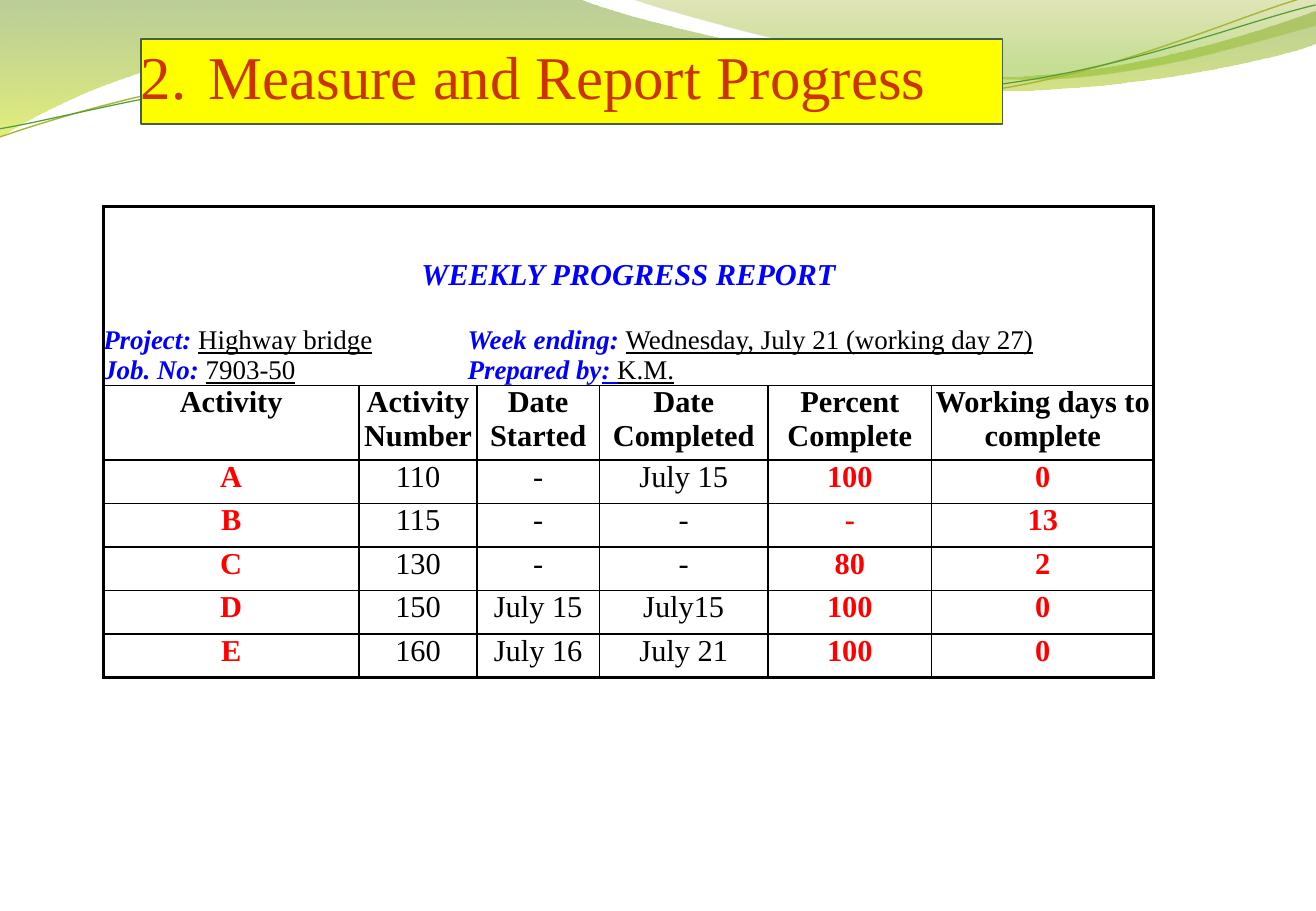
"""Build the weekly progress report slide with its wave header, title and table."""
from dataclasses import dataclass
from typing import Optional

from lxml.etree import SubElement
from pptx import Presentation
from pptx.dml.color import RGBColor
from pptx.enum.text import MSO_ANCHOR as ANCHOR, MSO_AUTO_SIZE as AUTO, PP_ALIGN as ALIGN
from pptx.oxml.ns import qn
from pptx.util import Pt

FONT = "Times New Roman"
BLACK, WHITE, RED, BLUE = "000000", "FFFFFF", "FF0000", "0000FF"
COLS = (151.7, 69.8, 72.6, 100, 97, 131.7)
ROWS = (106.2, 44.1) + (25.8,) * 5
RED_COLS = (0, 4, 5)
DATA = (
    ("Activity", "Activity Number", "Date Started", "Date Completed",
     "Percent Complete", "Working days to complete"),
    ("A", "110", "-", "July 15", "100", "0"),
    ("B", "115", "-", "-", "-", "13"),
    ("C", "130", "-", "-", "80", "2"),
    ("D", "150", "July 15", "July15", "100", "0"),
    ("E", "160", "July 16", "July 21", "100", "0"),
)


@dataclass
class Stop:
    position: float
    color: str
    alpha: int


@dataclass
class Wave:
    start: tuple
    segments: tuple
    stops: tuple = ()
    line: Optional[str] = None
    width: float = 0


WAVES = (
    Wave((0, 0), (
        (343.4, -0.7),
        (370.8, 12.2, 517.7, 45.4, 591.1, 45.4),
        (665.3, 45.4, 747.4, 18.7, 779.8, 6.5),
        (780.5, 25.9),
        (766.8, 31.7, 678.2, 54.7, 581.8, 54),
        (484.6, 54, 297.4, 20.2, 200.2, 24.5),
        (100.8, 25.9, 35.3, 59.8, -0.7, 81.4),
    ), stops=(Stop(0, "69921C", 45), Stop(1, "CCE10F", 55))),
    Wave((373.7, -0.7), (
        (396.7, 7.9, 531.4, 44.6, 599, 46.8),
        (667.4, 49.7, 749.5, 23, 779.8, 15.1),
        (779.8, 0),
    ), stops=(Stop(0, "9BAA1A", 30), Stop(0.8, "81BA16", 45))),
    Wave((-0.7, 81.4), (
        (37.4, 68.4, 123.1, 41.8, 215.3, 38.2),
        (308.2, 33.8, 461.5, 63.4, 555.8, 56.9),
        (649.4, 50.4, 731.5, 9.4, 778.3, -2.9),
    ), line="A9B733", width=0.85),
    Wave((0, 76.3), (
        (36.7, 70.6, 127.4, 44.6, 220.3, 41),
        (313.9, 37.4, 465.8, 59.8, 558.7, 53.3),
        (652.3, 47.5, 733.7, 13.7, 779.8, 2.9),
    ), line="549E39", width=0.75),
)


def rgb(color: str) -> RGBColor:
    return RGBColor.from_string(color)


def add_run(p, text: str, *, size: float = 18, color: str = BLACK, bold: bool = False,
            italic: bool = False, underline: bool = False) -> None:
    r = p.add_run()
    r.text = text
    f = r.font
    f.name, f.size, f.color.rgb = FONT, Pt(size), rgb(color)
    f.bold, f.italic, f.underline = bold, italic, underline


def bend(sp, segments: tuple) -> None:
    lines = list(sp._element.spPr.iter(qn("a:lnTo")))
    for line, segment in zip(lines, segments):
        if len(segment) == 2:
            continue
        line.clear()
        curve = line.makeelement(qn("a:cubicBezTo"))
        line.getparent().replace(line, curve)
        for x, y in zip(segment[::2], segment[1::2]):
            SubElement(curve, qn("a:pt"), x=str(Pt(x) - sp.left), y=str(Pt(y) - sp.top))


def add_wave(s, wave: Wave) -> None:
    builder = s.shapes.build_freeform(*map(Pt, wave.start))
    ends = [(Pt(segment[-2]), Pt(segment[-1])) for segment in wave.segments]
    builder.add_line_segments(ends, close=bool(wave.stops))
    sp = builder.convert_to_shape()
    bend(sp, wave.segments)
    sp.shadow.inherit = False
    if wave.line:
        sp.fill.background()
        sp.line.color.rgb = rgb(wave.line)
        sp.line.width = Pt(wave.width)
        return
    sp.line.fill.background()
    sp.fill.gradient()
    sp.fill.gradient_angle = 270
    for stop, spec in zip(sp.fill.gradient_stops, wave.stops):
        stop.position = spec.position
        stop.color.rgb = rgb(spec.color)
    for clr, spec in zip(sp._element.spPr.iter(qn("a:srgbClr")), wave.stops):
        SubElement(clr, qn("a:alpha"), val=str(spec.alpha * 1000))


def format_cell(cell, row: int, col: int) -> None:
    tcPr = cell._tc.get_or_add_tcPr()
    outer = {"L": col == 0, "R": col + cell.span_width == len(COLS),
             "T": row == 0, "B": row == len(ROWS) - 1}
    for side, is_outer in outer.items():
        ln = SubElement(tcPr, qn(f"a:ln{side}"), w=str(Pt(2 if is_outer else 1)))
        SubElement(SubElement(ln, qn("a:solidFill")), qn("a:srgbClr"), val=BLACK)
    cell.fill.solid()
    cell.fill.fore_color.rgb = rgb(WHITE)
    cell.margin_left = cell.margin_right = cell.margin_top = cell.margin_bottom = 0


def add_details(tf, *entries: tuple) -> None:
    p = tf.add_paragraph()
    tabs = SubElement(p._p.get_or_add_pPr(), qn("a:tabLst"))
    SubElement(tabs, qn("a:tab"), pos=str(Pt(216)), algn="l")
    for text, style in entries:
        add_run(p, text, size=16, **style)


def add_report(s) -> None:
    frame = s.shapes.add_table(len(ROWS), len(COLS), Pt(61.2), Pt(122.4),
                               Pt(sum(COLS)), Pt(sum(ROWS)))
    table = frame.table
    table.first_row = table.horz_banding = False
    for column, width in zip(table.columns, COLS):
        column.width = Pt(width)
    for row, height in zip(table.rows, ROWS):
        row.height = Pt(height)
    heading = table.cell(0, 0)
    heading.merge(table.cell(0, len(COLS) - 1))
    for i in range(len(ROWS)):
        for j in range(len(COLS)):
            format_cell(table.cell(i, j), i, j)
    for i, values in enumerate(DATA, start=1):
        for j, text in enumerate(values):
            p = table.cell(i, j).text_frame.paragraphs[0]
            p.alignment = ALIGN.CENTER
            red = i > 1 and j in RED_COLS
            add_run(p, text, color=RED if red else BLACK, bold=red or i == 1)
    heading.vertical_anchor = ANCHOR.BOTTOM
    tf = heading.text_frame
    label = dict(color=BLUE, bold=True, italic=True)
    value = dict(underline=True)
    tf.paragraphs[0].alignment = ALIGN.CENTER
    add_run(tf.paragraphs[0], "WEEKLY PROGRESS REPORT", **label)
    add_details(tf, ("Project: ", label), ("Highway bridge", value), ("\t", {}),
                ("Week ending: ", label), ("Wednesday, July 21 (working day 27)", value))
    add_details(tf, ("Job. No: ", label), ("7903-50", value), ("\t", {}),
                ("Prepared by", label), (": ", {**label, **value}), ("K.M.", value))
    tf.paragraphs[1].space_before = Pt(20.2)


def format_title(s, text: str) -> None:
    sp = s.shapes.title
    s.shapes._spTree.append(sp._element)
    sp.left, sp.top, sp.width, sp.height = Pt(83.5), Pt(23.2), Pt(510.5), Pt(50.4)
    sp.fill.solid()
    sp.fill.fore_color.rgb = rgb("FFFF00")
    sp.line.color.rgb = rgb("455F51")
    sp.line.width = Pt(0.75)
    tf = sp.text_frame
    tf.margin_left = tf.margin_right = tf.margin_top = tf.margin_bottom = 0
    tf.word_wrap, tf.auto_size, tf.vertical_anchor = True, AUTO.NONE, ANCHOR.TOP
    p = tf.paragraphs[0]
    p.alignment = ALIGN.LEFT
    pPr = p._p.get_or_add_pPr()
    pPr.set("marL", str(Pt(40.3)))
    pPr.set("indent", str(-Pt(40.3)))
    SubElement(SubElement(pPr, qn("a:buClr")), qn("a:srgbClr"), val="CC3300")
    SubElement(pPr, qn("a:buFont"), typeface=FONT)
    SubElement(pPr, qn("a:buAutoNum"), type="arabicPeriod", startAt="2")
    add_run(p, text, size=36, color="CC3300")


def main() -> None:
    prs = Presentation()
    prs.slide_width, prs.slide_height = Pt(780), Pt(540)
    s = prs.slides.add_slide(prs.slide_layouts[5])
    for wave in WAVES:
        add_wave(s, wave)
    add_report(s)
    format_title(s, "Measure and Report Progress")
    prs.save("out.pptx")


if __name__ == "__main__":
    main()
